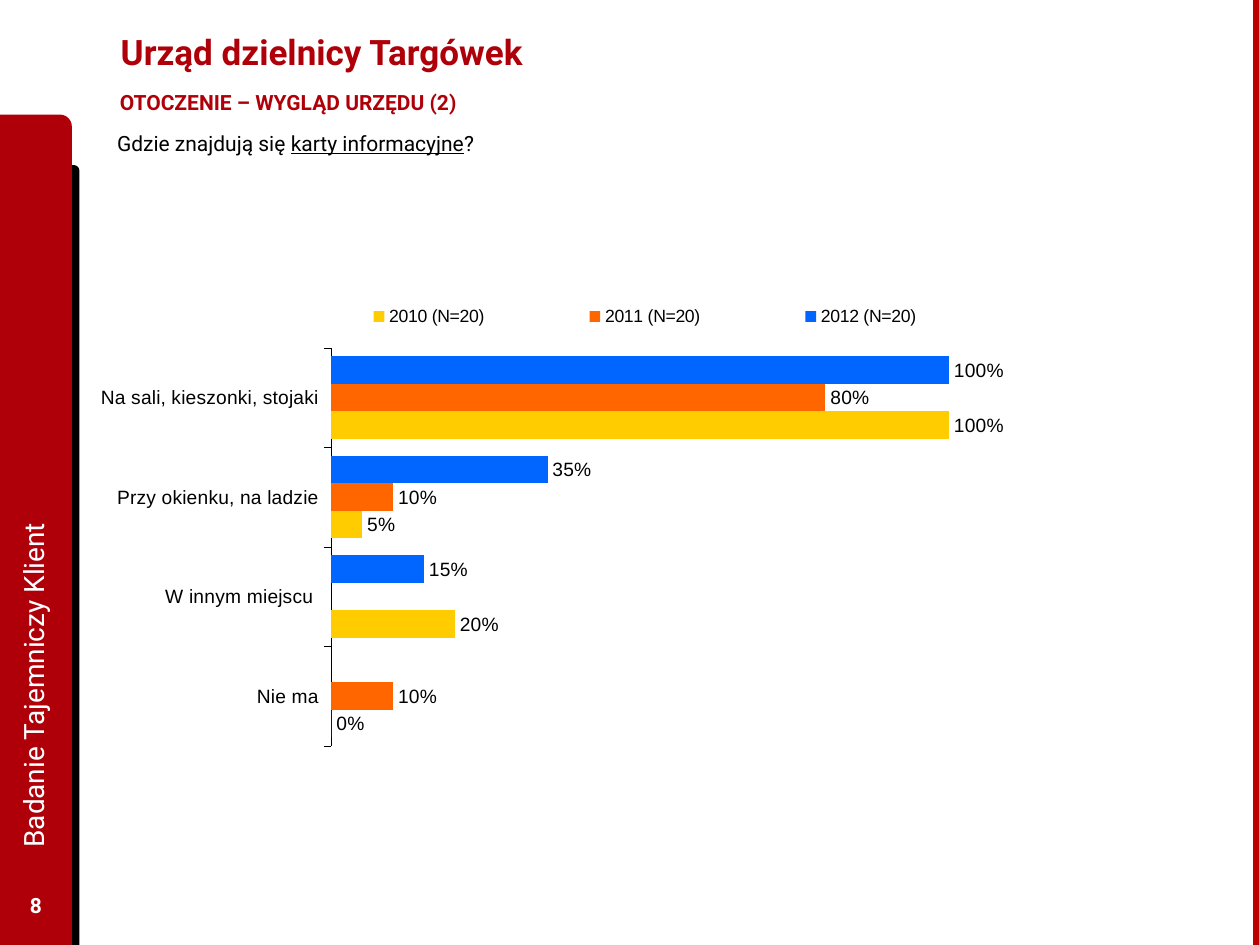
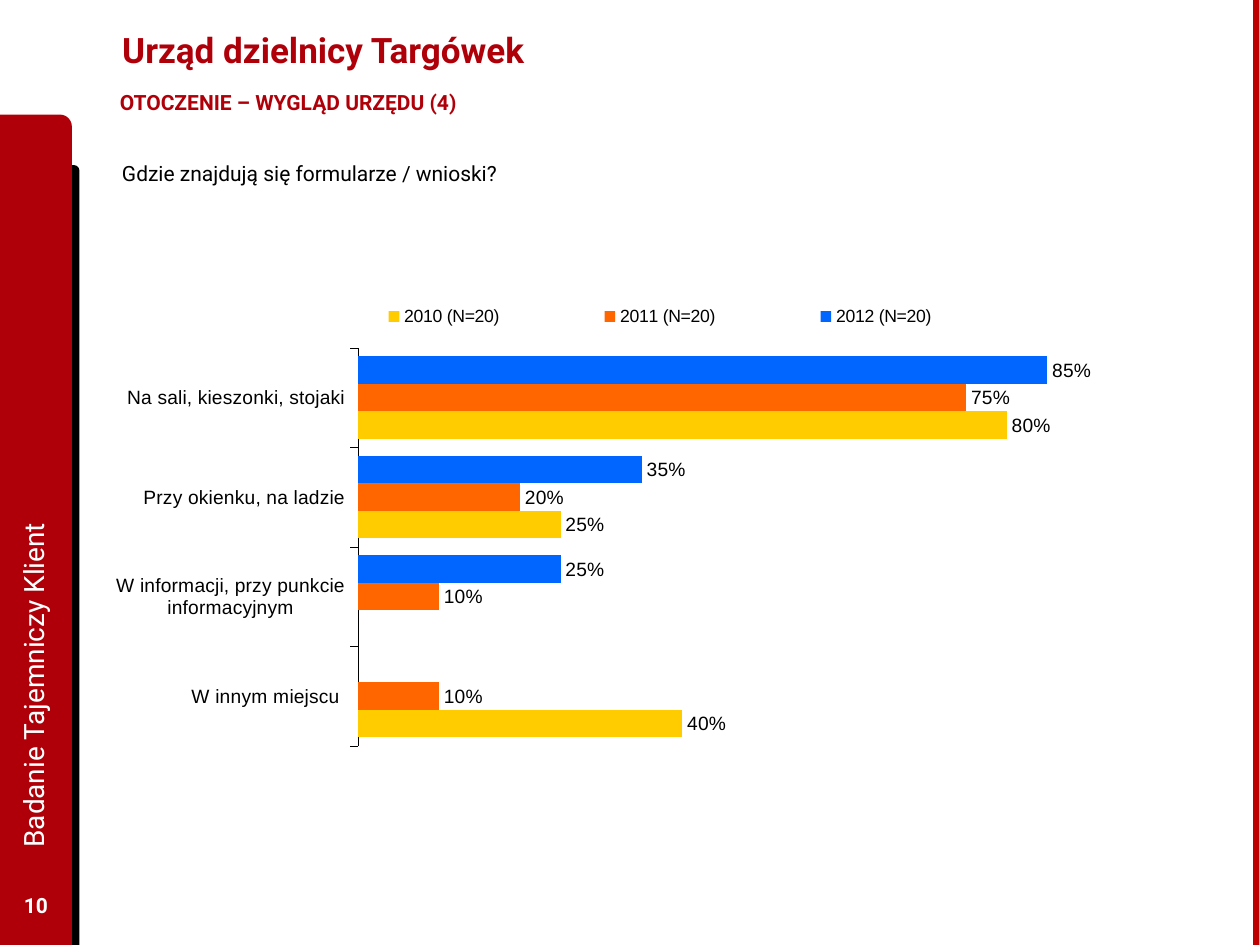
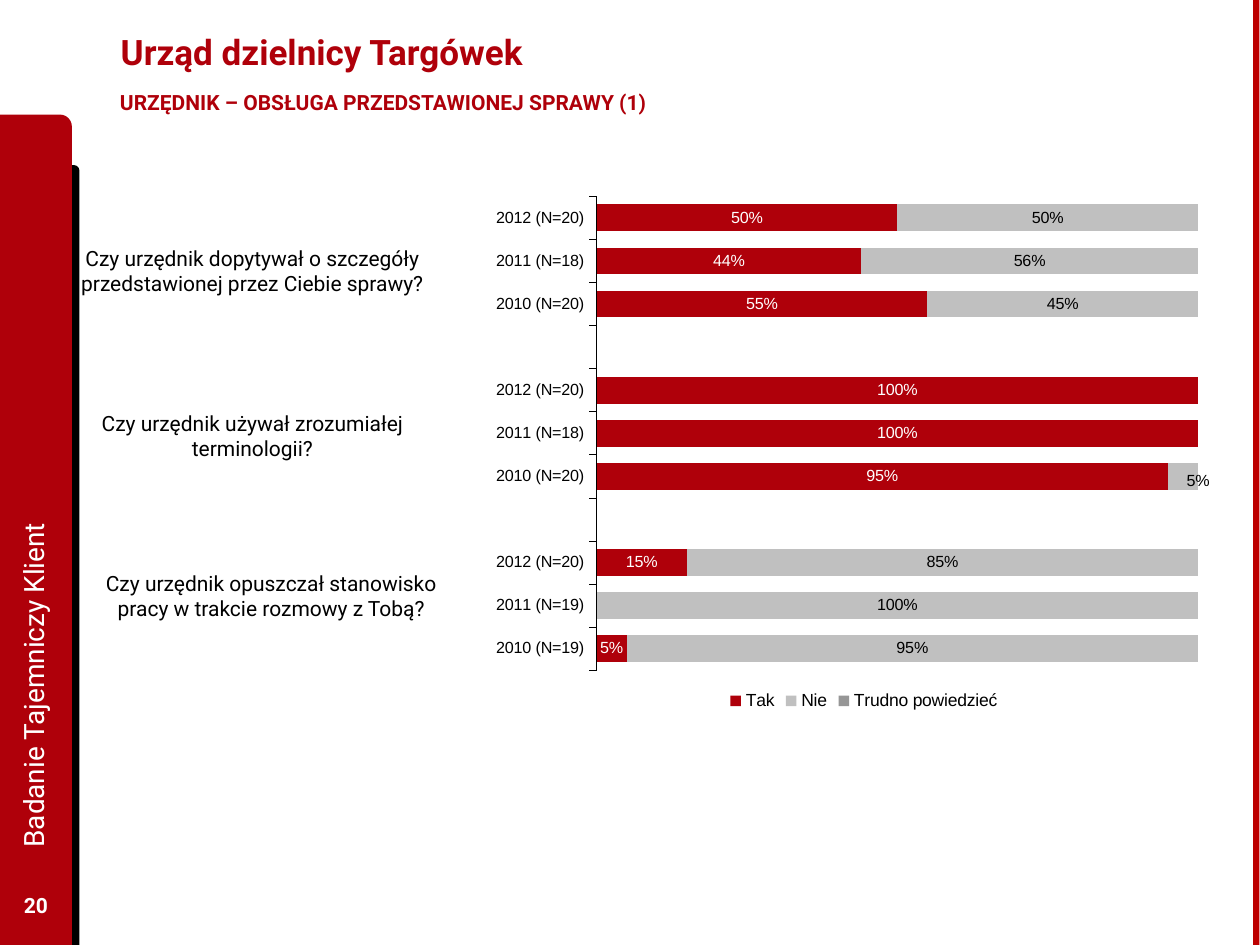
from lxml.etree import SubElement, Element
from pptx import Presentation
from pptx.chart.data import CategoryChartData
from pptx.dml.color import RGBColor
from pptx.enum.chart import XL_CHART_TYPE as ChartKind, XL_LABEL_POSITION as LabelAt
from pptx.enum.chart import XL_LEGEND_POSITION as LegendAt, XL_TICK_LABEL_POSITION as TickLabelAt
from pptx.enum.chart import XL_TICK_MARK as Tick
from pptx.enum.shapes import MSO_SHAPE as Shape
from pptx.enum.text import MSO_ANCHOR as Anchor, MSO_AUTO_SIZE as AutoSize, PP_ALIGN as Align
from pptx.oxml.ns import qn
from pptx.util import Cm, Pt

RED = RGBColor(0xAF, 0x00, 0x0A)
STRIPE_RED = RGBColor(0xBD, 0x00, 0x00)
BLACK = RGBColor(0x00, 0x00, 0x00)
WHITE = RGBColor(0xFF, 0xFF, 0xFF)
BLUE = RGBColor(0x00, 0x66, 0xFF)
ORANGE = RGBColor(0xFF, 0x66, 0x00)
YELLOW = RGBColor(0xFF, 0xCC, 0x00)
SILVER = RGBColor(0xC0, 0xC0, 0xC0)
GREY = RGBColor(0x96, 0x96, 0x96)

TITLE = "Urząd dzielnicy Targówek"
SIDE_TEXT = "Badanie Tajemniczy Klient"
BANDS = [
    (Shape.ROUND_1_RECTANGLE, (0.99, 3.33, 0.61, 15.72), BLACK),
    (Shape.ROUND_1_RECTANGLE, (0, 2.31, 1.45, 16.74), RED),
    (Shape.RECTANGLE, (25.26, 0, 0.13, 19.05), STRIPE_RED),
]

TITLE_FONT = dict(name="Roboto", size=Pt(20), bold=True)
HEADING_FONT = dict(name="Roboto", size=Pt(12), bold=True)
QUESTION_FONT = dict(name="Roboto", size=Pt(12))
SIDE_FONT = dict(name="Roboto", size=Pt(16))

YEARLY = dict(kind=ChartKind.BAR_CLUSTERED, label_at=LabelAt.OUTSIDE_END, size=11,
              legend_at=LegendAt.TOP, legend_size=10.1)
ANSWERS = dict(kind=ChartKind.BAR_STACKED, label_at=LabelAt.CENTER, size=9.2,
               legend_at=LegendAt.BOTTOM, legend_size=10)
YEAR_LEGEND = (0.15, 0, 0.65, 0.08)

PAGES = [
    dict(
        number="8", title_at=(2.18, 0.13), heading="OTOCZENIE – WYGLĄD URZĘDU (2)",
        questions=[((2.11, 2.51, 15.62, 0.76), Align.LEFT,
                    [("Gdzie znajdują się ", False), ("karty informacyjne", True), ("?", False)])],
        chart=dict(
            YEARLY, at=(2.03, 6.02, 23.04, 9.02), top=1.2,
            plot=(0.2, 0.11, 0.65, 0.89), legend=YEAR_LEGEND,
            categories=["Na sali, kieszonki, stojaki", "Przy okienku, na ladzie",
                        "W innym miejscu ", "Nie ma"],
            series=[("2012 (N=20)", BLUE, BLACK, [1, 0.35, 0.15, None]),
                    ("2011 (N=20)", ORANGE, BLACK, [0.8, 0.1, None, 0.1]),
                    ("2010 (N=20)", YELLOW, BLACK, [1, 0.05, 0.2, 0])]),
    ),
    dict(
        number="10", title_at=(2.21, 0.08), heading="OTOCZENIE – WYGLĄD URZĘDU (4)",
        questions=[((2.21, 3.12, 10.01, 0.76), Align.LEFT,
                    [("Gdzie znajdują się formularze / wnioski?", False)])],
        chart=dict(
            YEARLY, at=(2.34, 6.02, 23.04, 9.02), top=0.9,
            plot=(0.21, 0.11, 0.64, 0.89), legend=YEAR_LEGEND,
            categories=["Na sali, kieszonki, stojaki", "Przy okienku, na ladzie",
                        "W informacji, przy punkcie informacyjnym", "W innym miejscu "],
            series=[("2012 (N=20)", BLUE, BLACK, [0.85, 0.35, 0.25, None]),
                    ("2011 (N=20)", ORANGE, BLACK, [0.75, 0.2, 0.1, 0.1]),
                    ("2010 (N=20)", YELLOW, BLACK, [0.8, 0.25, None, 0.4])]),
    ),
    dict(
        number="20", title_at=(2.18, 0.13),
        heading="URZĘDNIK – OBSŁUGA PRZEDSTAWIONEJ SPRAWY (1)",
        questions=[
            ((0.99, 4.83, 8.2, 1.27), Align.CENTER,
             [("Czy urzędnik dopytywał o szczegóły przedstawionej przez Ciebie sprawy?", False)]),
            ((0.99, 8.15, 8.2, 1.27), Align.CENTER,
             [("Czy urzędnik używał zrozumiałej terminologii?", False)]),
            ((1.75, 11.38, 7.44, 1.27), Align.CENTER,
             [("Czy urzędnik opuszczał stanowisko pracy w trakcie rozmowy z Tobą?", False)]),
        ],
        chart=dict(
            ANSWERS, at=(9.78, 3.94, 15.27, 10.49), top=1,
            plot=(0.147, 0.002, 0.794, 0.91), legend=None, moved_label=(1, 6, 0.02, 0.01),
            categories=["2012 (N=20)", "2011 (N=18)", "2010 (N=20)", "",
                        "2012 (N=20)", "2011 (N=18)", "2010 (N=20)", "",
                        "2012 (N=20)", "2011 (N=19)", "2010 (N=19)"],
            series=[("Tak", RED, WHITE,
                     [0.5, 0.44, 0.55, None, 1, 1, 0.95, None, 0.15, None, 0.05]),
                    ("Nie", SILVER, BLACK,
                     [0.5, 0.56, 0.45, None, None, None, 0.05, None, 0.85, 1, 0.95]),
                    ("Trudno powiedzieć", GREY, BLACK, [None] * 11)]),
    ),
]


def set_font(font, color, **values):
    """Apply format values and a colour to a font."""
    for name, value in values.items():
        setattr(font, name, value)
    font.color.rgb = color


def write(box, spans, color, font, align=Align.LEFT, **frame_values):
    """Fill a box with one paragraph of (text, underlined) spans."""
    frame = box.text_frame
    values = dict(word_wrap=True, auto_size=AutoSize.NONE, vertical_anchor=Anchor.TOP)
    for name, value in (values | frame_values).items():
        setattr(frame, name, value)
    para = frame.paragraphs[0]
    para.alignment = align
    for text, underlined in spans:
        span = para.add_run()
        span.text = text
        set_font(span.font, color, **font)
        if underlined:
            span.font.underline = True


def add_text(page, at, *args, **values):
    """Add a text box at a place given in centimetres."""
    box = page.shapes.add_textbox(*map(Cm, at))
    write(box, *args, **values)
    return box


def add_frame(page, number, title_at, heading):
    """Draw the bands, title, heading, side text and page number."""
    for kind, at, color in BANDS:
        band = page.shapes.add_shape(kind, *map(Cm, at))
        band.shadow.inherit = False
        band.fill.solid()
        band.fill.fore_color.rgb = color
        band.line.fill.background()
    title = page.shapes.title
    title.left, title.top, title.width, title.height = map(Cm, (*title_at, 19.74, 1.83))
    write(title, [(TITLE, False)], RED, TITLE_FONT, vertical_anchor=Anchor.MIDDLE)
    add_text(page, (1.91, 1.68, 15, 0.84), [(heading, False)], RED, HEADING_FONT,
             margin_left=Cm(0.51))
    add_text(page, (0, 17.73, 1.45, 1.02), [(number, False)], WHITE, HEADING_FONT,
             align=Align.CENTER, vertical_anchor=Anchor.MIDDLE)
    side = add_text(page, (-6.65, 9.37, 14.63, 1.3), [(SIDE_TEXT, False)], WHITE, SIDE_FONT,
                    vertical_anchor=Anchor.MIDDLE)
    side.rotation = 270


def set_layout(parent, index, **values):
    """Give a chart part a manual layout."""
    for old in parent.findall(qn("c:layout")):
        parent.remove(old)
    layout = Element(qn("c:layout"))
    parent.insert(index, layout)
    manual = SubElement(layout, qn("c:manualLayout"))
    for name, value in values.items():
        SubElement(manual, qn(f"c:{name}")).set("val", str(value))


def place(parent, index, box, **target):
    """Place a chart part by fractions of the chart area."""
    set_layout(parent, index, **target, xMode="edge", yMode="edge", **dict(zip("xywh", box)))


def move_label(series, point, x, y, size):
    """Shift one data label from its default place."""
    label = series.points[point].data_label
    set_font(label.font, BLACK, name="Arial", size=Pt(size))
    label.position = LabelAt.CENTER
    element = series.data_labels._element.find(qn("c:dLbl"))
    set_layout(element, 1, x=x, y=y)
    number_format = Element(qn("c:numFmt"), formatCode="0%", sourceLinked="0")
    element.insert(2, number_format)


def add_bars(page, info):
    """Add a bar chart with its axes, legend and labels."""
    data = CategoryChartData(number_format="0%")
    data.categories = info["categories"]
    for name, _, _, values in info["series"]:
        data.add_series(name, values)
    chart = page.shapes.add_chart(info["kind"], *map(Cm, info["at"]), data).chart
    size = info["size"]
    chart.has_title = False
    set_font(chart.font, BLACK, name="Arial", size=Pt(size))

    axis = chart.category_axis
    axis.reverse_order = True
    axis.major_tick_mark, axis.minor_tick_mark = Tick.OUTSIDE, Tick.NONE
    axis.tick_label_position = TickLabelAt.LOW
    axis.format.line.color.rgb = BLACK
    axis.format.line.width = Pt(0.23)
    set_font(axis.tick_labels.font, BLACK, name="Arial", size=Pt(size))
    scale = chart.value_axis
    scale.visible = scale.has_major_gridlines = False
    scale.minimum_scale, scale.maximum_scale = 0, info["top"]

    chart.has_legend = True
    legend = chart.legend
    legend.position = info["legend_at"]
    legend.include_in_layout = False
    set_font(legend.font, BLACK, name="Arial", size=Pt(info["legend_size"]))
    if info["legend"]:
        place(legend._element, 1, info["legend"])
    place(chart._chartSpace.chart.plotArea, 0, info["plot"], layoutTarget="inner")

    plot = chart.plots[0]
    plot.gap_width = 60
    plot.vary_by_categories = False
    for series, (_, color, label_color, _) in zip(plot.series, info["series"]):
        series.format.fill.solid()
        series.format.fill.fore_color.rgb = color
        labels = series.data_labels
        labels.show_value = True
        labels.number_format, labels.number_format_is_linked = "0%", False
        labels.position = info["label_at"]
        set_font(labels.font, label_color, name="Arial", size=Pt(size))
    if "moved_label" in info:
        index, *shift = info["moved_label"]
        move_label(plot.series[index], *shift, size)


def main():
    """Build the deck and save it."""
    deck = Presentation()
    deck.slide_width, deck.slide_height = Cm(25.4), Cm(19.05)
    for content in PAGES:
        page = deck.slides.add_slide(deck.slide_layouts[5])
        add_frame(page, content["number"], content["title_at"], content["heading"])
        for at, align, spans in content["questions"]:
            add_text(page, at, spans, BLACK, QUESTION_FONT, align=align)
        add_bars(page, content["chart"])
    deck.save("out.pptx")


if __name__ == "__main__":
    main()
